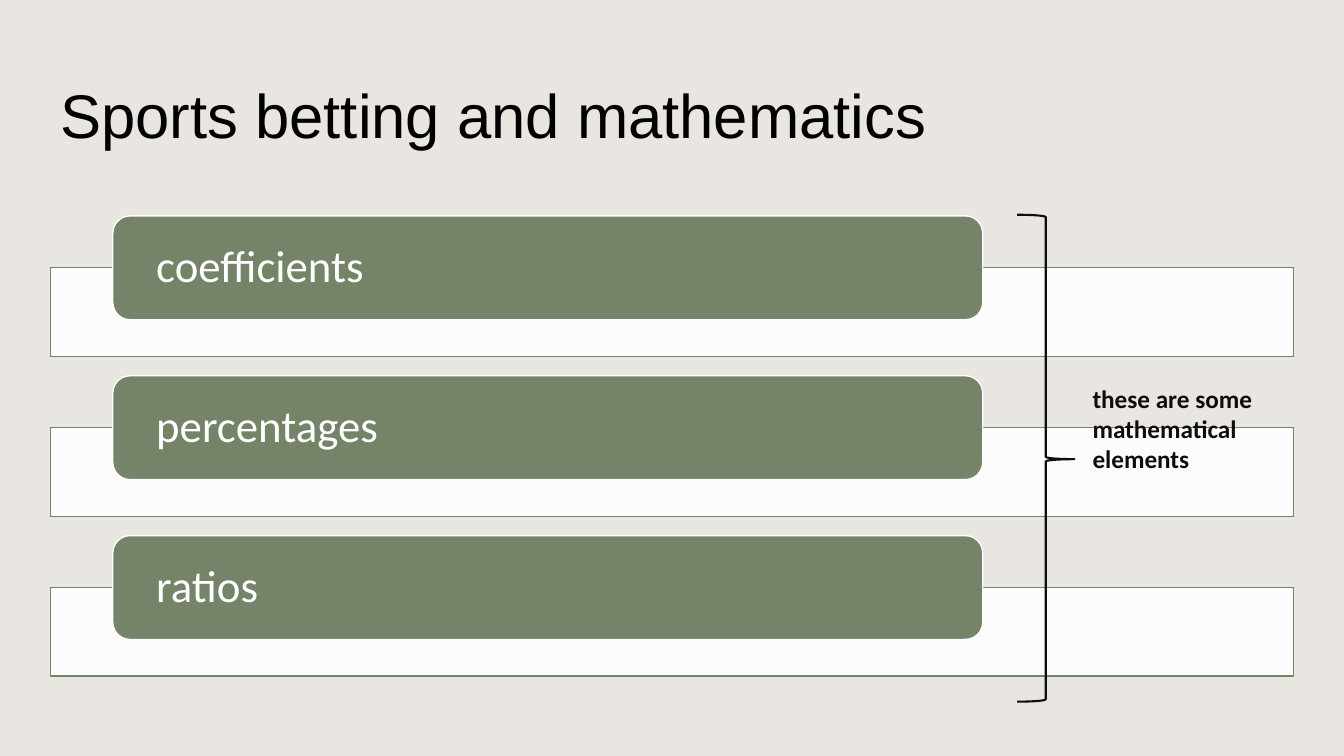
import dataclasses

import lxml.etree
import pptx
import pptx.dml.color
import pptx.enum.shapes
import pptx.enum.text
import pptx.oxml.ns
import pptx.util

Pt = pptx.util.Pt
Shape = pptx.enum.shapes.MSO_SHAPE
Anchor = pptx.enum.text.MSO_ANCHOR
Align = pptx.enum.text.PP_ALIGN


@dataclasses.dataclass(frozen=True)
class Theme:
    background: str = "E9E5E1"
    green: str = "758468"
    white: str = "FFFFFF"
    black: str = "000000"
    ink: str = "0D0D0D"
    title_font: str = "Arial"
    body_font: str = "Calibri"
    title_size: int = 44
    element_size: int = 32
    note_size: int = 18


class SlideBuilder:
    def __init__(self, slide, theme):
        self.slide = slide
        self.theme = theme
        fill = slide.background.fill
        fill.solid()
        fill.fore_color.rgb = self.rgb(theme.background)

    def rgb(self, colour):
        return pptx.dml.color.RGBColor.from_string(colour)

    def set_text(self, frame, text, font, size, colour, anchor, bold=False):
        frame.text = text
        frame.word_wrap = True
        frame.vertical_anchor = anchor
        paragraph = frame.paragraphs[0]
        paragraph.alignment = Align.LEFT
        run_font = paragraph.runs[0].font
        run_font.name = font
        run_font.size = Pt(size)
        run_font.bold = bold
        run_font.color.rgb = self.rgb(colour)
        return paragraph

    def title(self, text, left, top, width, height):
        title = self.slide.shapes.title
        title.left, title.top = Pt(left), Pt(top)
        title.width, title.height = Pt(width), Pt(height)
        self.set_text(title.text_frame, text, self.theme.title_font,
                      self.theme.title_size, self.theme.black, Anchor.MIDDLE)

    def outline(self, preset, left, top, width, height, line, weight, fill=None):
        shape = self.slide.shapes.add_shape(
            preset, Pt(left), Pt(top), Pt(width), Pt(height))
        shape.shadow.inherit = False
        shape.line.color.rgb = self.rgb(line)
        shape.line.width = Pt(weight)
        if fill:
            shape.fill.solid()
            shape.fill.fore_color.rgb = self.rgb(fill)
        else:
            shape.fill.background()
        return shape

    def band(self, left, top, width, height):
        band = self.outline(Shape.RECTANGLE, left, top, width, height,
                            self.theme.green, 1, self.theme.white)
        qn = pptx.oxml.ns.qn
        fill = band.element.spPr.find(qn("a:solidFill"))
        lxml.etree.SubElement(fill[0], qn("a:alpha"), val="90000")

    def element(self, text, left, top, width, height):
        card = self.outline(Shape.ROUNDED_RECTANGLE, left, top, width, height,
                            self.theme.white, 1, self.theme.green)
        frame = card.text_frame
        frame.margin_left = frame.margin_right = Pt(27.4)
        frame.margin_top = frame.margin_bottom = 0
        paragraph = self.set_text(frame, text, self.theme.body_font,
                                  self.theme.element_size, self.theme.white,
                                  Anchor.MIDDLE)
        paragraph.line_spacing = 0.9

    def brace(self, left, top, width, height):
        brace = self.outline(Shape.RIGHT_BRACE, left, top, width, height,
                             self.theme.ink, 1.5)
        brace.adjustments[0] = 0.04
        brace.adjustments[1] = 0.502

    def note(self, text, left, top, width, height):
        note = self.slide.shapes.add_textbox(
            Pt(left), Pt(top), Pt(width), Pt(height))
        self.set_text(note.text_frame, text, self.theme.body_font,
                      self.theme.note_size, self.theme.ink, Anchor.TOP, bold=True)


def main():
    presentation = pptx.Presentation()
    presentation.slide_width = Pt(960)
    presentation.slide_height = Pt(540)
    slide = presentation.slides.add_slide(presentation.slide_layouts[5])
    builder = SlideBuilder(slide, Theme())

    builder.title("Sports betting and mathematics", 36, 29, 858, 104)
    first_top, pitch = 154.2, 114.2
    for row, name in enumerate(("coefficients", "percentages", "ratios")):
        top = first_top + row * pitch
        builder.band(36, top + 37, 888, 63.4)
        builder.element(name, 80.6, top, 621.4, 74.2)
    builder.brace(726.5, 153.4, 41, 347.8)
    builder.note("these are some mathematical elements", 773.3, 270, 150.5, 94.3)

    presentation.save("out.pptx")


if __name__ == "__main__":
    main()
